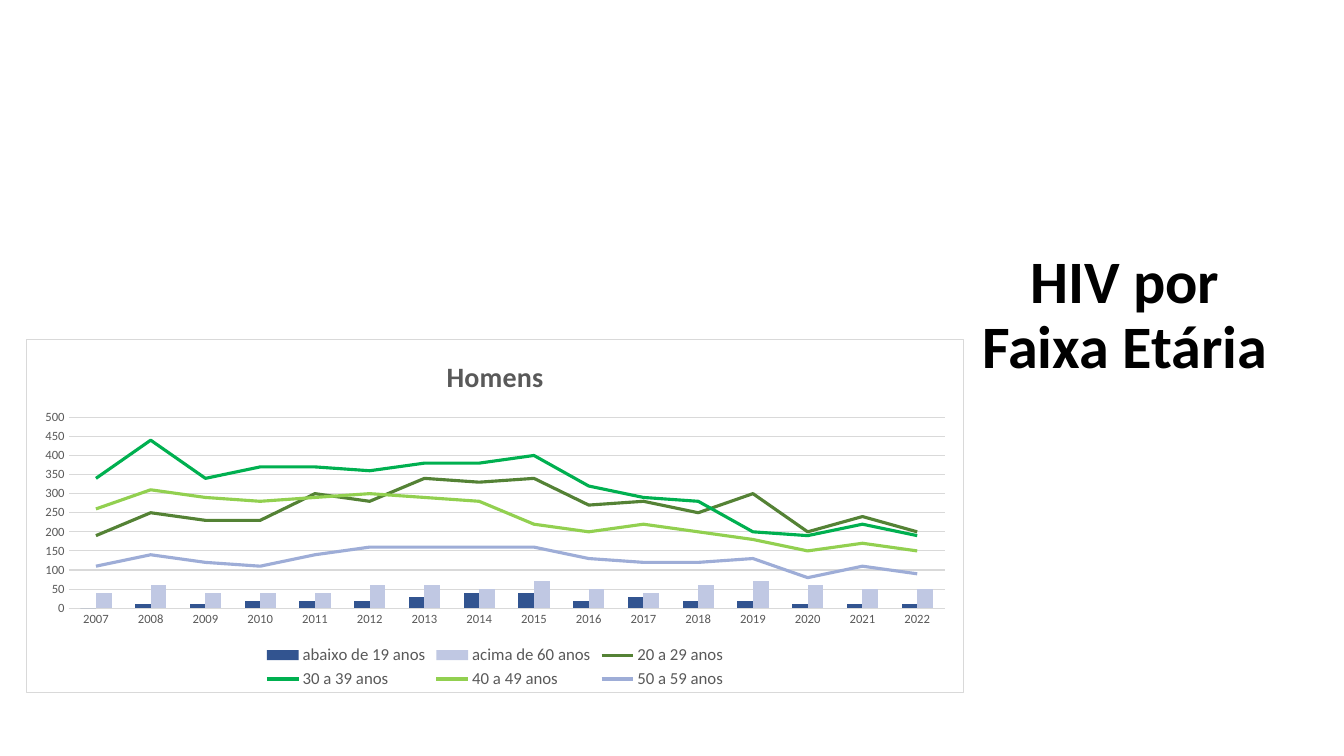
from copy import deepcopy

from lxml import etree
from pptx import Presentation
from pptx.chart.data import CategoryChartData
from pptx.dml.color import RGBColor
from pptx.enum import chart as chart_enum, text
from pptx.oxml import ns, parse_xml
from pptx.util import Inches, Pt

FONT = "Calibri"
COLORS = {"title": "000000", "label": "595959", "grid": "D9D9D9", "background": "FFFFFF"}
YEARS = [str(year) for year in range(2007, 2023)]
BARS = [
    ("abaixo de 19 anos", "325490", [0, 10, 10, 20, 20, 20, 30, 40, 40, 20, 30, 20, 20, 10, 10, 10]),
    ("acima de 60 anos", "C0C8E3", [40, 60, 40, 40, 40, 60, 60, 50, 70, 50, 40, 60, 70, 60, 50, 50]),
]
LINES = [
    ("20 a 29 anos", "548235",
     [190, 250, 230, 230, 300, 280, 340, 330, 340, 270, 280, 250, 300, 200, 240, 200]),
    ("30 a 39 anos", "00B050",
     [340, 440, 340, 370, 370, 360, 380, 380, 400, 320, 290, 280, 200, 190, 220, 190]),
    ("40 a 49 anos", "92D050",
     [260, 310, 290, 280, 290, 300, 290, 280, 220, 200, 220, 200, 180, 150, 170, 150]),
    ("50 a 59 anos", "9EADD7",
     [110, 140, 120, 110, 140, 160, 160, 160, 160, 130, 120, 120, 130, 80, 110, 90]),
]


def rgb(value):
    return RGBColor.from_string(value)


def style_font(font, size, color, bold=False):
    font.name = FONT
    font.size = Pt(size)
    font.bold = bold
    font.color.rgb = rgb(color)


def style_line(line, color, width):
    line.color.rgb = rgb(color)
    line.width = Pt(width)


def add_title(slide, words):
    box = slide.shapes.add_textbox(Inches(9.63), Inches(2.42), Inches(3.05), Inches(1.44))
    frame = box.text_frame
    frame.word_wrap = True
    frame.vertical_anchor = text.MSO_ANCHOR.MIDDLE
    paragraph = frame.paragraphs[0]
    paragraph.text = words
    paragraph.alignment = text.PP_ALIGN.CENTER
    paragraph.line_spacing = 0.9
    style_font(paragraph.font, 43, COLORS["title"], True)


def move_to_line_plot(chart, first):
    bar_plot = chart.plots[0]
    bar_element = chart._chartSpace.find(f'.//{ns.qn("c:barChart")}')
    line_element = parse_xml(
        f'<c:lineChart {ns.nsdecls("c")}><c:grouping val="standard"/>'
        '<c:varyColors val="0"/><c:marker val="1"/></c:lineChart>'
    )
    marker = line_element.find(ns.qn("c:marker"))
    for series in list(bar_plot.series)[first:]:
        element = series._element
        for setting in element.findall(ns.qn("c:invertIfNegative")):
            element.remove(setting)
        marker.addprevious(element)
    for axis_id in bar_element.findall(ns.qn("c:axId")):
        line_element.append(deepcopy(axis_id))
    bar_element.addnext(line_element)


def style_chart_area(chart):
    area = parse_xml(
        f'<c:spPr {ns.nsdecls("c", "a")}>'
        f'<a:solidFill><a:srgbClr val="{COLORS["background"]}"/></a:solidFill>'
        f'<a:ln w="{Pt(0.75)}"><a:solidFill><a:srgbClr val="{COLORS["grid"]}"/>'
        '</a:solidFill></a:ln></c:spPr>'
    )
    chart_space = chart._chartSpace
    chart_space.find(ns.qn("c:chart")).addnext(area)
    rounded = chart_space.find(ns.qn("c:roundedCorners"))
    if rounded is None:
        rounded = etree.Element(ns.qn("c:roundedCorners"))
        chart_space.find(ns.qn("c:chart")).addprevious(rounded)
    rounded.set("val", "0")


def style_axes(chart):
    for axis in (chart.category_axis, chart.value_axis):
        axis.major_tick_mark = chart_enum.XL_TICK_MARK.NONE
        axis.minor_tick_mark = chart_enum.XL_TICK_MARK.NONE
        style_font(axis.tick_labels.font, 9, COLORS["label"])
    style_line(chart.category_axis.format.line, COLORS["grid"], 0.75)
    value_axis = chart.value_axis
    value_axis.minimum_scale = 0
    value_axis.maximum_scale = 500
    value_axis.major_unit = 50
    value_axis.tick_labels.number_format = "#,##0"
    value_axis.tick_labels.number_format_is_linked = False
    value_axis.format.line.fill.background()
    style_line(value_axis.major_gridlines.format.line, COLORS["grid"], 0.75)


def style_series(chart):
    bar_plot, line_plot = chart.plots
    bar_plot.gap_width = 150
    bar_plot.overlap = 0
    bar_plot.vary_by_categories = False
    for series, (_, color, _) in zip(bar_plot.series, BARS):
        series.format.fill.solid()
        series.format.fill.fore_color.rgb = rgb(color)
    for series, (_, color, _) in zip(line_plot.series, LINES):
        style_line(series.format.line, color, 2.25)
        series.marker.style = chart_enum.XL_MARKER_STYLE.NONE
        series.smooth = False


def add_age_chart(slide, heading):
    data = CategoryChartData(number_format="#,##0")
    data.categories = YEARS
    for name, _, values in BARS + LINES:
        data.add_series(name, values)
    chart = slide.shapes.add_chart(
        chart_enum.XL_CHART_TYPE.COLUMN_CLUSTERED,
        Inches(0.26), Inches(3.36), Inches(9.3), Inches(3.52), data,
    ).chart
    style_font(chart.font, 10, COLORS["title"])
    chart.has_title = True
    chart.chart_title.include_in_layout = False
    paragraph = chart.chart_title.text_frame.paragraphs[0]
    paragraph.text = heading
    style_font(paragraph.font, 20, COLORS["label"], True)
    chart.has_legend = True
    chart.legend.position = chart_enum.XL_LEGEND_POSITION.BOTTOM
    chart.legend.include_in_layout = False
    style_font(chart.legend.font, 12, COLORS["label"])
    move_to_line_plot(chart, len(BARS))
    style_series(chart)
    style_axes(chart)
    style_chart_area(chart)


def main():
    presentation = Presentation()
    presentation.slide_width = Inches(13.33)
    presentation.slide_height = Inches(7.5)
    slide = presentation.slides.add_slide(presentation.slide_layouts[6])
    add_title(slide, "HIV por Faixa Etária")
    add_age_chart(slide, "Homens")
    presentation.save("out.pptx")


if __name__ == "__main__":
    main()
